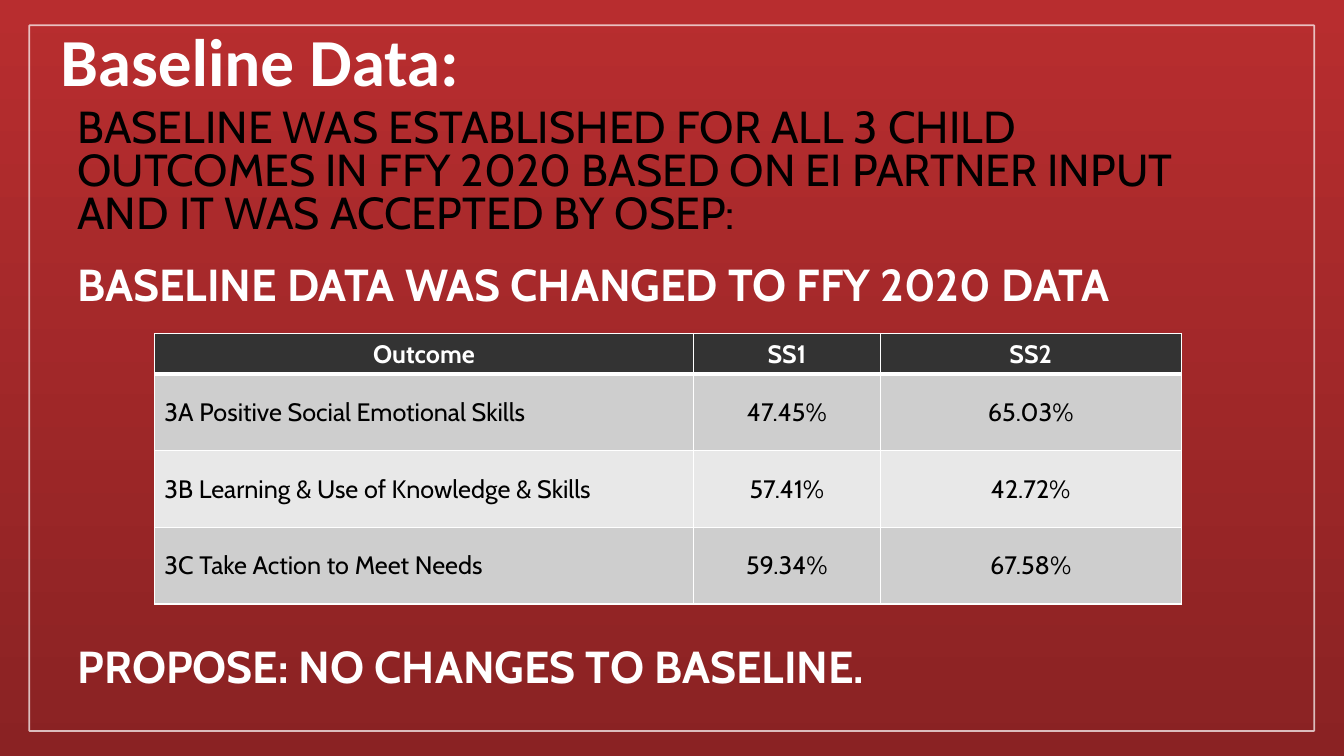
from lxml import etree
from pptx import Presentation
from pptx import util as u
from pptx.dml.color import RGBColor
from pptx.enum import shapes, text
from pptx.oxml.ns import qn

Cm = u.Cm
COLORS = {
    "white": "FFFFFF",
    "black": "000000",
    "top_red": "B82D2F",
    "bottom_red": "8A2223",
    "header": "333333",
    "odd_row": "CECECE",
    "even_row": "E8E8E8",
}
OUTCOMES = [
    ("Outcome", "SS1", "SS2"),
    ("3A Positive Social Emotional Skills", "47.45%", "65.03%"),
    ("3B Learning & Use of Knowledge & Skills", "57.41%", "42.72%"),
    ("3C Take Action to Meet Needs", "59.34%", "67.58%"),
]
COLUMN_WIDTHS = [13.59, 4.7, 7.59]
HEADER_HEIGHT, ROW_HEIGHT = 1.02, 1.93


def rgb(name):
    return RGBColor.from_string(COLORS[name])


def write(p, content, size=32, font="Cabin", color="white", bold=False,
          align=text.PP_ALIGN.LEFT, spacing=None, before=0):
    p.alignment = align
    p.space_before = u.Pt(before)
    if spacing:
        p.line_spacing = spacing
    r = p.add_run()
    r.text = content
    r.font.size = u.Pt(size)
    r.font.name = font
    r.font.bold = bold
    r.font.color.rgb = rgb(color)


def add_text_frame(s, left, top, width, height, anchor=text.MSO_ANCHOR.TOP):
    tf = s.shapes.add_textbox(Cm(left), Cm(top), Cm(width), Cm(height)).text_frame
    tf.word_wrap = True
    tf.vertical_anchor = anchor
    return tf


def paint_background(s):
    fill = s.background.fill
    fill.gradient()
    fill.gradient_angle = 270
    for stop, name in zip(fill.gradient_stops, ("top_red", "bottom_red")):
        stop.color.rgb = rgb(name)


def add_frame(s):
    sp = s.shapes.add_shape(shapes.MSO_SHAPE.RECTANGLE,
                            Cm(0.74), Cm(0.64), Cm(32.38), Cm(17.78))
    sp.shadow.inherit = False
    sp.fill.background()
    sp.line.color.rgb = rgb("white")
    sp.line.width = u.Pt(1.25)
    color = sp.line._ln.find(".//" + qn("a:srgbClr"))
    etree.SubElement(color, qn("a:alpha"), val="70000")


def set_borders(cell, **widths):
    """Draw white cell borders; widths are points keyed by side L, R, T, B."""
    tcPr = cell._tc.get_or_add_tcPr()
    for i, side in enumerate("LRTB"):
        ln = etree.Element(qn(f"a:ln{side}"), w=str(u.Pt(widths.get(side, 1))))
        fill = etree.SubElement(ln, qn("a:solidFill"))
        etree.SubElement(fill, qn("a:srgbClr"), val=COLORS["white"])
        tcPr.insert(i, ln)


def add_outcome_table(s):
    height = HEADER_HEIGHT + ROW_HEIGHT * (len(OUTCOMES) - 1)
    table = s.shapes.add_table(len(OUTCOMES), len(COLUMN_WIDTHS), Cm(3.89), Cm(8.41),
                               Cm(sum(COLUMN_WIDTHS)), Cm(height)).table
    for column, width in zip(table.columns, COLUMN_WIDTHS):
        column.width = Cm(width)
    for i, row in enumerate(OUTCOMES):
        header = i == 0
        table.rows[i].height = Cm(HEADER_HEIGHT if header else ROW_HEIGHT)
        fill = "header" if header else "odd_row" if i % 2 else "even_row"
        for j, content in enumerate(row):
            cell = table.cell(i, j)
            cell.fill.solid()
            cell.fill.fore_color.rgb = rgb(fill)
            cell.vertical_anchor = text.MSO_ANCHOR.MIDDLE
            centred = header or j > 0
            write(cell.text_frame.paragraphs[0], content, size=18, bold=header,
                  color="white" if header else "black",
                  align=text.PP_ALIGN.CENTER if centred else text.PP_ALIGN.LEFT)
            set_borders(cell, T=3 if i == 1 else 1, B=3 if header else 1)


def main():
    prs = Presentation()
    prs.slide_width, prs.slide_height = Cm(33.87), Cm(19.05)
    s = prs.slides.add_slide(prs.slide_layouts[6])
    paint_background(s)
    add_frame(s)

    title = add_text_frame(s, 1.27, 0.71, 31.12, 1.91, text.MSO_ANCHOR.BOTTOM)
    write(title.paragraphs[0], "Baseline Data:", size=48, font="Calibri",
          bold=True, spacing=0.8)

    body = add_text_frame(s, 1.7, 2.62, 30.28, 5.4)
    write(body.paragraphs[0],
          "BASELINE WAS ESTABLISHED FOR ALL 3 CHILD OUTCOMES IN FFY 2020 "
          "BASED ON EI PARTNER INPUT AND IT WAS ACCEPTED BY OSEP:",
          color="black", spacing=0.8, before=18)
    write(body.add_paragraph(), "BASELINE DATA WAS CHANGED TO FFY 2020 DATA",
          bold=True, spacing=0.9, before=18)

    add_outcome_table(s)

    proposal = add_text_frame(s, 1.7, 16.23, 30.28, 1.5)
    write(proposal.paragraphs[0], "PROPOSE: NO CHANGES TO BASELINE.",
          bold=True, spacing=0.8)
    prs.save("out.pptx")


if __name__ == "__main__":
    main()
